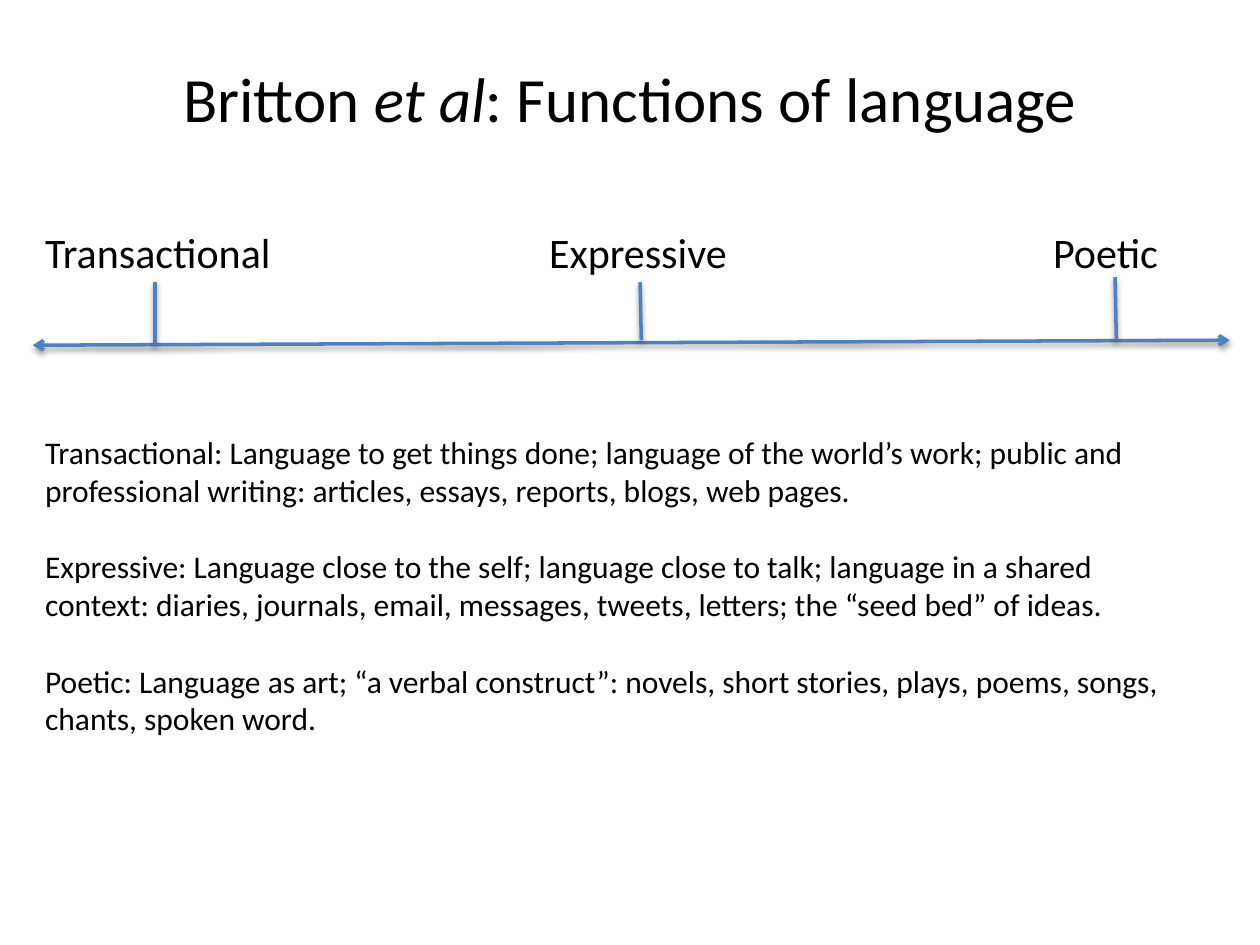
import pptx
import pptx.util
import pptx.dml.color
import pptx.enum.shapes
import pptx.enum.text
import lxml.etree
from pptx.util import Inches

BLACK = pptx.dml.color.RGBColor(0x00, 0x00, 0x00)
BLUE = pptx.dml.color.RGBColor(0x4F, 0x81, 0xBD)
A = "http://schemas.openxmlformats.org/drawingml/2006/main"
SHADOW = (
    f'<a:effectLst xmlns:a="{A}">'
    '<a:outerShdw blurRad="40000" dist="20000" dir="5400000" rotWithShape="0">'
    '<a:srgbClr val="000000"><a:alpha val="38000"/></a:srgbClr>'
    '</a:outerShdw></a:effectLst>'
)

prs = pptx.Presentation()
prs.slide_width, prs.slide_height = Inches(10), Inches(7.5)
s = prs.slides.add_slide(prs.slide_layouts[6])


def add_text(x, y, w, h, size, paragraphs):
    """Add a text box; each paragraph is a list of (text, italic) runs."""
    sp = s.shapes.add_textbox(Inches(x), Inches(y), Inches(w), Inches(h))
    tf = sp.text_frame
    tf.word_wrap = True
    for i, runs in enumerate(paragraphs):
        p = tf.paragraphs[0] if i == 0 else tf.add_paragraph()
        for text, italic in runs:
            r = p.add_run()
            r.text = text
            r.font.name = "Calibri"
            r.font.size = pptx.util.Pt(size)
            r.font.italic = italic
            r.font.color.rgb = BLACK
    return tf


def add_line(x1, y1, x2, y2):
    """Add a blue line with a soft shadow and return its line element."""
    line = s.shapes.add_connector(
        pptx.enum.shapes.MSO_CONNECTOR.STRAIGHT,
        Inches(x1), Inches(y1), Inches(x2), Inches(y2))
    line.line.color.rgb = BLUE
    line.line.width = pptx.util.Pt(2)
    line.element.spPr.append(lxml.etree.fromstring(SHADOW))
    return line.element.spPr.find(f"{{{A}}}ln")


# Title
tf = add_text(0.5, 0.3, 9, 0.95, 36, [
    [("Britton ", False), ("et al", True), (": Functions of language", False)]])
tf.vertical_anchor = pptx.enum.text.MSO_ANCHOR.MIDDLE
tf.paragraphs[0].alignment = pptx.enum.text.PP_ALIGN.CENTER

# Scale labels, spaced with tab stops
tf = add_text(0.26, 1.75, 9.58, 4.95, 24,
              [[("Transactional\tExpressive\tPoetic", False)]])
p = tf.paragraphs[0]
p.space_before = pptx.util.Pt(4.8)
tabs = lxml.etree.SubElement(p._p.get_or_add_pPr(), f"{{{A}}}tabLst")
for stop in (4, 8):
    lxml.etree.SubElement(tabs, f"{{{A}}}tab", pos=str(Inches(stop)), algn="l")

# Double-headed scale
ln = add_line(0.26, 2.74, 9.76, 2.7)
for end in ("headEnd", "tailEnd"):
    lxml.etree.SubElement(ln, f"{{{A}}}{end}", type="arrow")

# Ticks up to the labels
for x1, y1, x2, y2 in [(1.23, 2.74, 1.23, 2.24),
                       (5.09, 2.7, 5.08, 2.24),
                       (8.86, 2.7, 8.85, 2.2)]:
    add_line(x1, y1, x2, y2)

# Definitions
definitions = [
    "Transactional: Language to get things done; language of the world’s work; "
    "public and professional writing: articles, essays, reports, blogs, web pages.",
    "Expressive: Language close to the self; language close to talk; language in "
    "a shared context: diaries, journals, email, messages, tweets, letters; "
    "the “seed bed” of ideas.",
    "Poetic: Language as art; “a verbal construct”: novels, short stories, plays, "
    "poems, songs, chants, spoken word.",
]
tf = add_text(0.26, 3.39, 9.3, 2.52, 18, [[(d, False)] for d in definitions])
tf.auto_size = pptx.enum.text.MSO_AUTO_SIZE.SHAPE_TO_FIT_TEXT
for p in tf.paragraphs[:-1]:
    p.space_after = pptx.util.Pt(22)

prs.save("out.pptx")
